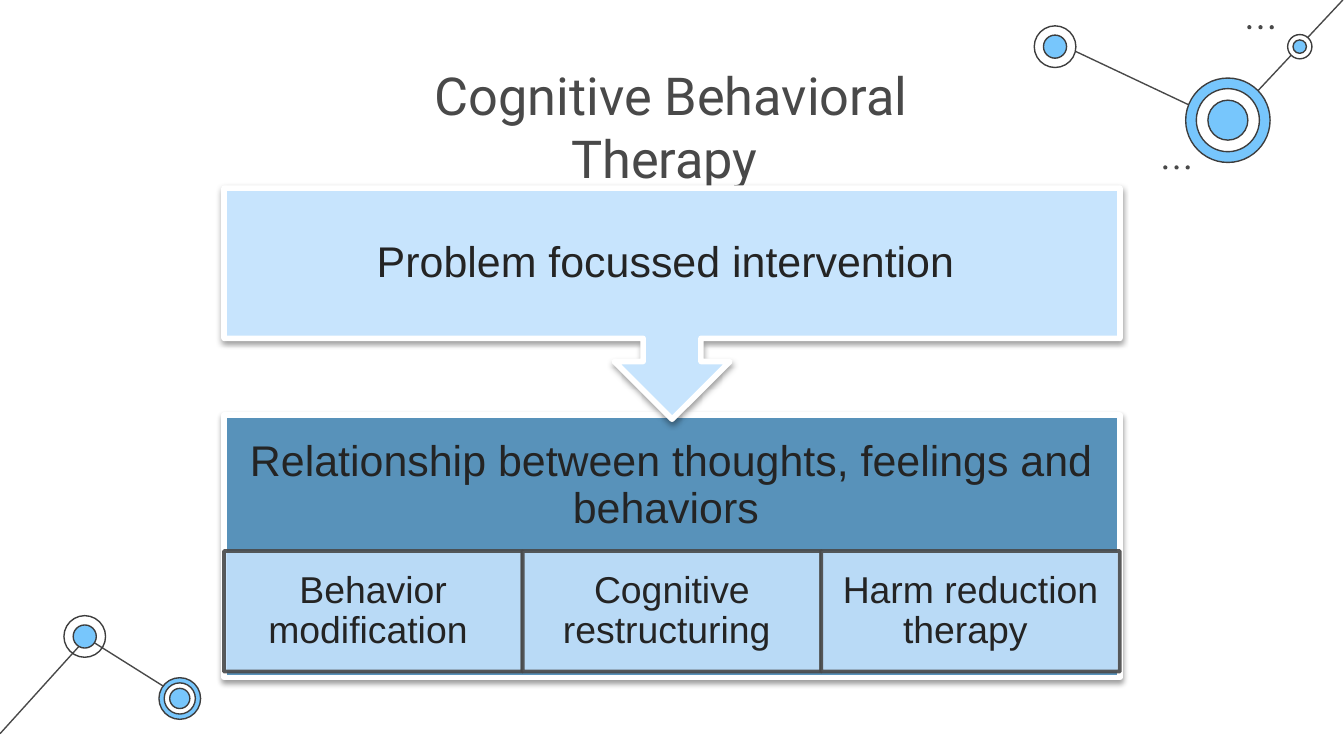
from lxml import etree
from pptx import Presentation, util as u
from pptx.dml.color import RGBColor
from pptx.enum import shapes, text
from pptx.oxml.ns import qn

Pt = u.Pt
Kind = shapes.MSO_SHAPE
HUE = {"ink": "494949", "rim": "3D3D3D", "sky": "77C6FC", "white": "FFFFFF",
       "steel": "5892BA", "pale": "C7E4FD", "tile": "C4E2FD", "dark": "242424",
       "black": "000000"}

prs = Presentation()
prs.slide_width, prs.slide_height = Pt(720), Pt(405)
slide = prs.slides.add_slide(prs.slide_layouts[6])
items = slide.shapes


def draw(kind, box, fill, line=None, wide=0.75):
    """Add a preset shape; a hue of None means no fill or no line."""
    shape = items.add_shape(kind, *map(Pt, box))
    shape.shadow.inherit = False
    for part, hue in ((shape.fill, fill), (shape.line.fill, line)):
        if hue:
            part.solid()
            part.fore_color.rgb = RGBColor.from_string(HUE[hue])
        else:
            part.background()
    if line:
        shape.line.width = Pt(wide)
    return shape


def write(shape, words, size, pad, face="Arial", hue="dark", mid=True):
    """Set centred, wrapped text with (side, top and bottom) insets."""
    frame = shape.text_frame
    side, edge = map(Pt, pad)
    form = {"word_wrap": True, "margin_left": side, "margin_right": side,
            "margin_top": edge, "margin_bottom": edge,
            "vertical_anchor": text.MSO_ANCHOR.MIDDLE if mid else text.MSO_ANCHOR.TOP}
    for key, val in form.items():
        setattr(frame, key, val)
    para = frame.paragraphs[0]
    para.alignment = text.PP_ALIGN.CENTER
    if mid:
        para.line_spacing = 0.9
    run = para.add_run()
    run.text = words
    for key, val in {"size": Pt(size), "name": face}.items():
        setattr(run.font, key, val)
    run.font.color.rgb = RGBColor.from_string(HUE[hue])


# Corner links
links = [(46.8, 342, 99.4, 375.1), (0, 393.1, 46.8, 341.3),
         (658.1, 66.2, 566.6, 23), (719.4, 0, 658.1, 65.5)]
for ends in links:
    link = items.add_connector(shapes.MSO_CONNECTOR.STRAIGHT, *map(Pt, ends))
    link.line.color.rgb = RGBColor.from_string(HUE["ink"])
    link.line.width = Pt(0.75)
    etree.SubElement(link._element.spPr, qn("a:effectLst"))

# Corner nodes: centre, then rings from the outside in
nodes = [(45.4, 341, [(22.3, None), (12.4, "sky")]),
         (96.3, 374.2, [(22.3, "sky"), (16.7, "white"), (10.8, "sky")]),
         (657.8, 64.4, [(45.2, "sky"), (33.8, "white"), (21.4, "sky")]),
         (565.2, 25, [(22.3, "white"), (12.4, "sky")]),
         (696.3, 25, [(13, "white"), (7.2, "sky")])]
for x, y, rings in nodes:
    for size, hue in rings:
        draw(Kind.OVAL, (x - size / 2, y - size / 2, size, size), hue, "rim")

# Rows of three dots
for x, y in [(668.2, 13.5), (623.2, 88.6)]:
    for i in range(3):
        draw(Kind.OVAL, (x + 6 * i, y, 2.2, 2.2), "ink")

# Title
title = items.add_textbox(Pt(174), Pt(26.6), Pt(371), Pt(45.4))
write(title, "Cognitive Behavioral Therapy ", 28, (7.2, 7.2), "Roboto", "ink", False)

# Lower panel with its three therapies
left, width = 120, 480
panel = draw(Kind.RECTANGLE, (left, 222.5, width, 140.4), "steel", "white", 3)
head = items.add_textbox(Pt(left), Pt(222.5), Pt(width), Pt(75.8))
write(head, "Relationship between thoughts, feelings and behaviors ", 23, (13, 13))

names = ["Behavior modification ", "Cognitive restructuring ", "Harm reduction therapy "]
step = width / len(names)
for i, name in enumerate(names):
    tile = draw(Kind.RECTANGLE, (left + i * step, 295.2, step, 64.6), "tile", "ink", 2)
    for tone in tile._element.spPr.iter(qn("a:srgbClr")):
        etree.SubElement(tone, qn("a:alpha"), val="90000")
    write(tile, name, 20, (11.5, 2.2))

# Upper callout, turned to point down
call = draw(Kind.UP_ARROW_CALLOUT, (left, 100.8, width, 123.8), "pale", "white", 3)
call.rotation = 180
label = items.add_textbox(Pt(left), Pt(100.8), Pt(width), Pt(80.6))
write(label, "Problem focussed intervention ", 23, (13, 13))

# Soft shadows under the two large shapes
for shape in (panel, call):
    effect = shape._element.spPr.find(qn("a:effectLst"))
    shade = etree.SubElement(effect, qn("a:outerShdw"), blurRad=str(Pt(3.1)),
                             dist=str(Pt(1.6)), dir="5400000", rotWithShape="0")
    tone = etree.SubElement(shade, qn("a:srgbClr"), val=HUE["black"])
    etree.SubElement(tone, qn("a:alpha"), val="38000")

prs.save("out.pptx")
